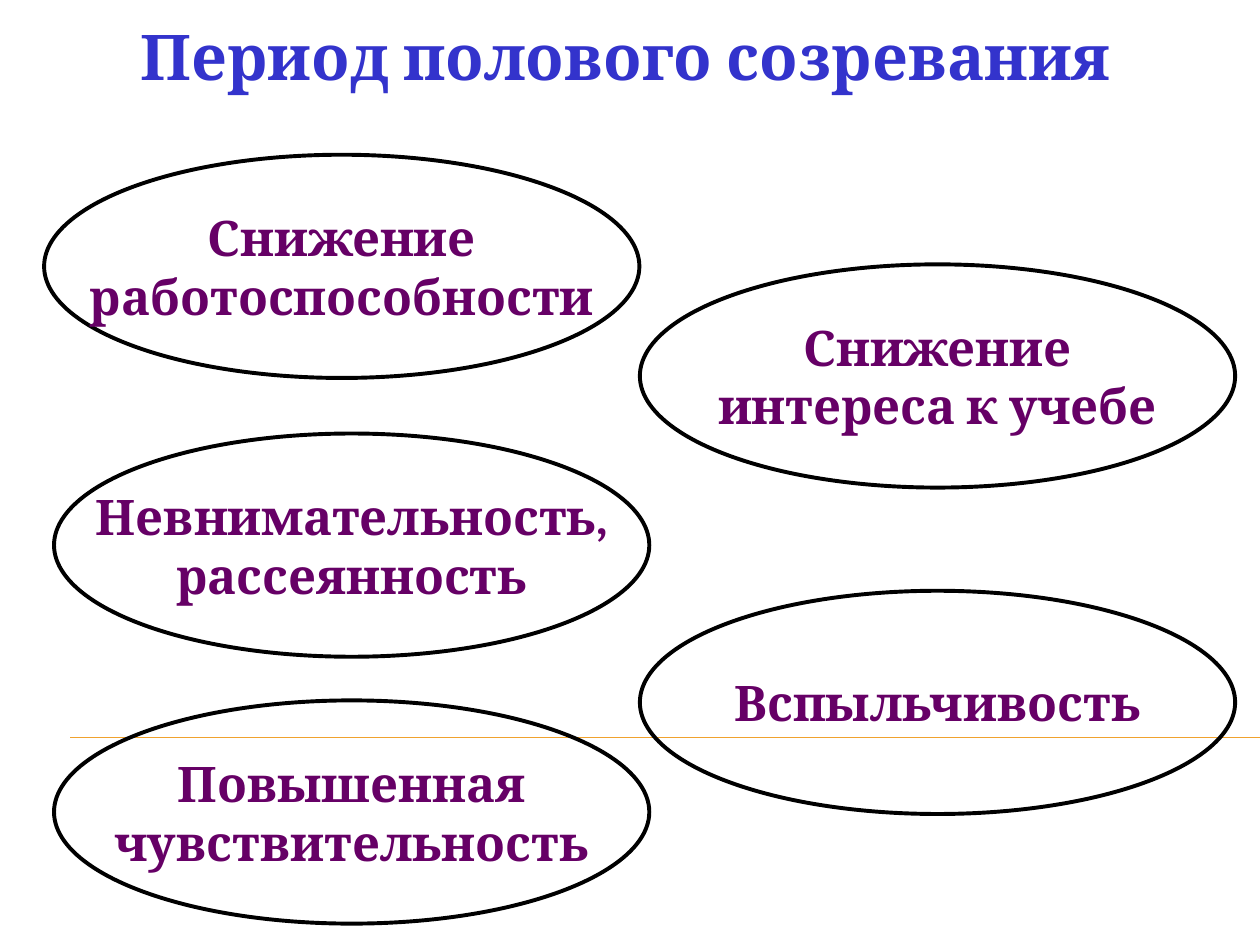
from dataclasses import dataclass

from lxml import etree
from pptx import Presentation
from pptx.dml.color import RGBColor
from pptx.enum.shapes import MSO_CONNECTOR, MSO_SHAPE
from pptx.enum.text import MSO_ANCHOR, PP_ALIGN
from pptx.oxml.ns import qn
from pptx.slide import Slide
from pptx.text.text import TextFrame
from pptx.util import Cm, Pt

STRAIGHT = MSO_CONNECTOR.STRAIGHT
OVAL = MSO_SHAPE.OVAL
MIDDLE = MSO_ANCHOR.MIDDLE
CENTER = PP_ALIGN.CENTER

BLUE = RGBColor(0x33, 0x33, 0xCC)
PURPLE = RGBColor(0x66, 0x00, 0x66)
BLACK = RGBColor(0x00, 0x00, 0x00)
ORANGE = RGBColor(0xF0, 0xA2, 0x2E)

FONT = "Cambria"
OVAL_WIDTH = Cm(12)
OVAL_HEIGHT = Cm(4.5)


@dataclass
class Trait:
    left: float
    top: float
    text: str


TRAITS = [
    Trait(0.89, 3.12, "Снижение\nработоспособности"),
    Trait(1.09, 8.74, "Невнимательность,\nрассеянность"),
    Trait(12.9, 5.33, "Снижение\nинтереса к учебе"),
    Trait(1.09, 14.12, "Повышенная\nчувствительность"),
    Trait(12.9, 11.91, "Вспыльчивость"),
]


def write_text(tf: TextFrame, text: str, size: int, color: RGBColor) -> None:
    tf.text = text
    for p in tf.paragraphs:
        p.alignment = CENTER
        for r in p.runs:
            r.font.name = FONT
            r.font.size = Pt(size)
            r.font.bold = True
            r.font.color.rgb = color


def add_rule(s: Slide) -> None:
    line = s.shapes.add_connector(STRAIGHT, Cm(1.42), Cm(14.86), Cm(25.4), Cm(14.86))
    line.line.color.rgb = ORANGE
    line.line.width = Pt(0.75)
    etree.SubElement(line._element.spPr, qn("a:effectLst"))


def add_title(s: Slide, text: str) -> None:
    tf = s.shapes.add_textbox(Cm(0.69), Cm(0.53), Cm(24.2), Cm(2.39)).text_frame
    tf.word_wrap = True
    tf.margin_left = 0
    tf.margin_right = Cm(0.35)
    write_text(tf, text, 36, BLUE)
    tf.paragraphs[0].line_spacing = 0.8


def add_trait(s: Slide, trait: Trait) -> None:
    sp = s.shapes.add_shape(OVAL, Cm(trait.left), Cm(trait.top), OVAL_WIDTH, OVAL_HEIGHT)
    sp.shadow.inherit = False
    sp.fill.background()
    sp.line.color.rgb = BLACK
    sp.line.width = Pt(2.25)
    tf = sp.text_frame
    tf.word_wrap = False
    tf.vertical_anchor = MIDDLE
    write_text(tf, trait.text, 28, PURPLE)


def main() -> None:
    prs = Presentation()
    prs.slide_width = Cm(25.4)
    prs.slide_height = Cm(19.05)
    s = prs.slides.add_slide(prs.slide_layouts[6])
    add_rule(s)
    add_title(s, "Период полового созревания")
    for trait in TRAITS:
        add_trait(s, trait)
    prs.save("out.pptx")


if __name__ == "__main__":
    main()
